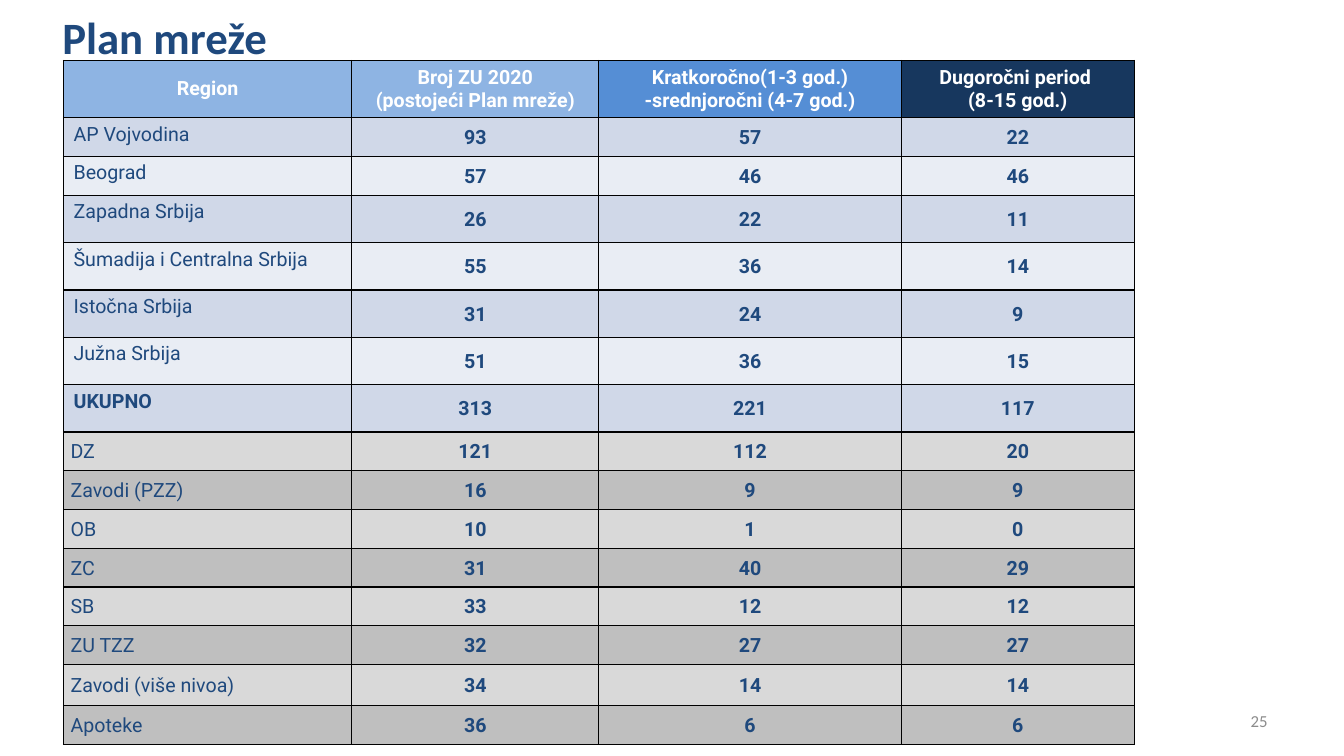
import pptx
import pptx.dml.color
import pptx.enum.text
import pptx.oxml
import pptx.oxml.ns
import pptx.util
from pptx.dml.color import RGBColor
from pptx.util import Inches

NAVY = RGBColor(0x1F, 0x49, 0x7D)
WHITE = RGBColor(0xFF, 0xFF, 0xFF)
GREY = RGBColor(0x8C, 0x8C, 0x8C)
HEADER_FILLS = [RGBColor(0x8E, 0xB4, 0xE3), RGBColor(0x8E, 0xB4, 0xE3),
                RGBColor(0x55, 0x8E, 0xD5), RGBColor(0x17, 0x37, 0x5E)]
REGION_FILLS = [RGBColor(0xD0, 0xD8, 0xE8), RGBColor(0xE9, 0xED, 0xF4)]
TYPE_FILLS = [RGBColor(0xD9, 0xD9, 0xD9), RGBColor(0xBF, 0xBF, 0xBF)]

LEFT = pptx.enum.text.PP_ALIGN.LEFT
CENTER = pptx.enum.text.PP_ALIGN.CENTER
RIGHT = pptx.enum.text.PP_ALIGN.RIGHT
TOP = pptx.enum.text.MSO_ANCHOR.TOP
MIDDLE = pptx.enum.text.MSO_ANCHOR.MIDDLE

HEADER = ["Region", "Broj ZU 2020\n(postojeći Plan mreže)",
          "Kratkoročno(1-3 god.) -srednjoročni (4-7 god.)",
          "Dugoročni period \n(8-15 god.)"]
REGIONS = [
    ("AP Vojvodina", 93, 57, 22),
    ("Beograd", 57, 46, 46),
    ("Zapadna Srbija", 26, 22, 11),
    ("Šumadija i Centralna Srbija", 55, 36, 14),
    ("Istočna Srbija", 31, 24, 9),
    ("Južna Srbija", 51, 36, 15),
    ("UKUPNO", 313, 221, 117),
]
TYPES = [
    ("DZ", 121, 112, 20),
    ("Zavodi (PZZ)", 16, 9, 9),
    ("OB", 10, 1, 0),
    ("ZC", 31, 40, 29),
    ("SB", 33, 12, 12),
    ("ZU TZZ", 32, 27, 27),
    ("Zavodi (više nivoa)", 34, 14, 14),
    ("Apoteke", 36, 6, 6),
]
COLUMN_WIDTHS = [2.86, 2.45, 3, 2.31]
HEADER_HEIGHT = 0.57
TALL_ROWS = {row: 0.47 for row in range(3, 8)} | {14: 0.41}


def write_text(frame, text, size=14, font="Roboto", color=NAVY, bold=False,
               align=LEFT, spacing=None):
    frame.word_wrap = True
    frame.text = text
    for para in frame.paragraphs:
        para.alignment = align
        if spacing:
            para.line_spacing = spacing
        for span in para.runs:
            span.font.size = pptx.util.Pt(size)
            span.font.name = font
            span.font.bold = bold
            span.font.color.rgb = color


def add_label(page, box, text, anchor=TOP, **text_format):
    frame = page.shapes.add_textbox(*map(Inches, box)).text_frame
    frame.vertical_anchor = anchor
    write_text(frame, text, font="Calibri", **text_format)


def add_borders(cell):
    properties = cell._tc.get_or_add_tcPr()
    namespace = pptx.oxml.ns.nsdecls("a")
    for position, side in enumerate(("lnL", "lnR", "lnT", "lnB")):
        properties.insert(position, pptx.oxml.parse_xml(
            f'<a:{side} {namespace} w="12700"><a:solidFill>'
            f'<a:srgbClr val="000000"/></a:solidFill></a:{side}>'))


def fill_cell(cell, text, fill, anchor=MIDDLE, tight=False, **text_format):
    cell.fill.solid()
    cell.fill.fore_color.rgb = fill
    cell.vertical_anchor = anchor
    if tight:
        cell.margin_left = cell.margin_right = Inches(0.07)
        cell.margin_top = cell.margin_bottom = 0
        text_format["spacing"] = 1.07
    write_text(cell.text_frame, text, **text_format)
    add_borders(cell)


def add_network_table(page, box):
    records = REGIONS + TYPES
    table = page.shapes.add_table(len(records) + 1, len(HEADER),
                                  *map(Inches, box)).table

    # Column widths and row heights: ordinary rows share the height left over
    for column, width in zip(table.columns, COLUMN_WIDTHS):
        column.width = Inches(width)
    fixed = {0: HEADER_HEIGHT} | TALL_ROWS
    ordinary = (box[3] - sum(fixed.values())) / (len(records) + 1 - len(fixed))
    for index, row in enumerate(table.rows):
        row.height = Inches(fixed.get(index, ordinary))

    # Header
    for column, (text, fill) in enumerate(zip(HEADER, HEADER_FILLS)):
        fill_cell(table.cell(0, column), text, fill, color=WHITE, bold=True,
                  align=CENTER)

    # Regions, then institution types, each with its own banding
    for index, (name, *counts) in enumerate(records):
        is_region = index < len(REGIONS)
        if is_region:
            fill = REGION_FILLS[index % 2]
        else:
            fill = TYPE_FILLS[(index - len(REGIONS)) % 2]
        fill_cell(table.cell(index + 1, 0), name, fill,
                  anchor=TOP if is_region else MIDDLE, tight=not is_region,
                  bold=name == "UKUPNO")
        for column, count in enumerate(counts, start=1):
            fill_cell(table.cell(index + 1, column), str(count), fill,
                      tight=True, bold=True, align=CENTER)


def main():
    deck = pptx.Presentation()
    deck.slide_width = Inches(13.33)
    deck.slide_height = Inches(7.5)
    page = deck.slides.add_slide(deck.slide_layouts[6])

    # Title, table and page number
    add_label(page, (0.52, 0.05, 7.2, 1.11), "Plan mreže", size=32, bold=True)
    add_network_table(page, (0.63, 0.6, sum(COLUMN_WIDTHS), 6.79))
    add_label(page, (9.56, 6.95, 3.11, 0.4), "25", anchor=MIDDLE, size=12,
              color=GREY, align=RIGHT)
    deck.save("out.pptx")


if __name__ == "__main__":
    main()
